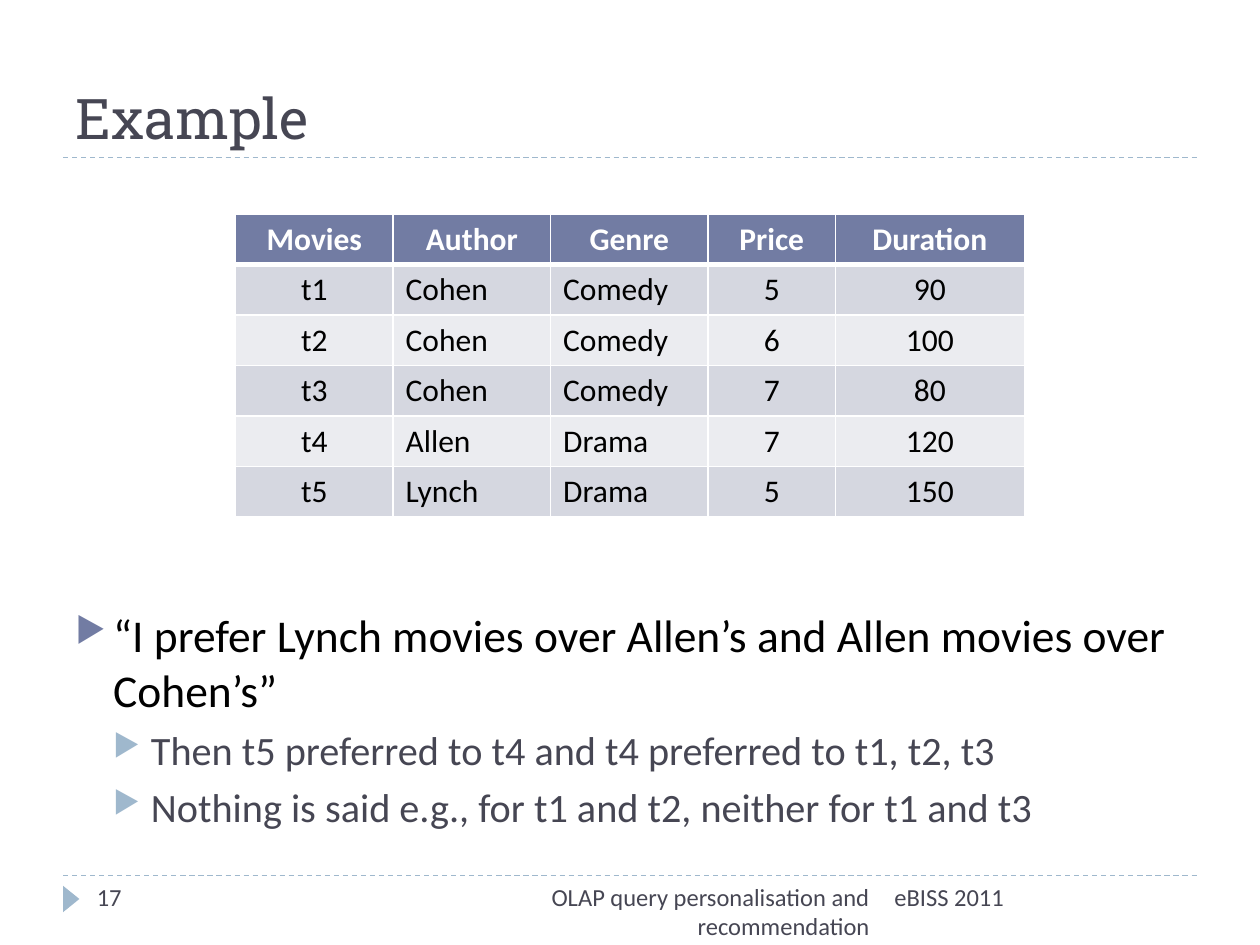
from lxml import etree
from pptx import Presentation
from pptx.dml.color import RGBColor
from pptx.enum import dml, shapes, text
from pptx.oxml import parse_xml
from pptx.oxml.ns import nsdecls, qn
from pptx.util import Inches, Pt

INK = RGBColor(0x46, 0x46, 0x53)
BLACK = RGBColor(0, 0, 0)
WHITE = RGBColor(0xFF, 0xFF, 0xFF)
INDIGO = RGBColor(0x72, 0x7C, 0xA3)
SKY = RGBColor(0x9F, 0xB8, 0xCD)
BANDS = [RGBColor(0xEB, 0xEC, 0xF0), RGBColor(0xD5, 0xD7, 0xE0)]
LEFT, CENTER, RIGHT = text.PP_ALIGN.LEFT, text.PP_ALIGN.CENTER, text.PP_ALIGN.RIGHT


def write(p, words, size, color, align=LEFT, **formats):
    p.alignment = align
    r = p.add_run()
    r.text = words
    r.font.color.rgb = color
    for name, value in {"name": "Calibri", "size": Pt(size), **formats}.items():
        setattr(r.font, name, value)


def add_text(s, left, top, width, height):
    box = s.shapes.add_textbox(Inches(left), Inches(top), Inches(width), Inches(height))
    box.text_frame.word_wrap = True
    return box.text_frame


prs = Presentation()
prs.slide_width, prs.slide_height = Inches(10), Inches(7.5)
s = prs.slides.add_slide(prs.slide_layouts[5])

# Dashed rules under the title and above the footer
for y in (6.95, 1.25):
    rule = s.shapes.add_connector(shapes.MSO_CONNECTOR.STRAIGHT,
                                  Inches(0.5), Inches(y), Inches(9.5), Inches(y))
    rule.line.color.rgb = SKY
    rule.line.width = Pt(0.75)
    rule.line.dash_style = dml.MSO_LINE.DASH
    etree.SubElement(rule._element.spPr, qn("a:effectLst"))

# Page number marker
marker = s.shapes.add_shape(shapes.MSO_SHAPE.ISOSCELES_TRIANGLE,
                            Inches(0.46), Inches(7.07), Inches(0.21), Inches(0.13))
marker.rotation = 90
marker.shadow.inherit = False
marker.fill.solid()
marker.fill.fore_color.rgb = SKY
marker.line.fill.background()

# Title
title = s.shapes.title
for name, value in dict(left=0.5, top=0.17, width=9, height=1.08).items():
    setattr(title, name, Inches(value))
tf = title.text_frame
tf.vertical_anchor = text.MSO_ANCHOR.BOTTOM
tf.auto_size = text.MSO_AUTO_SIZE.NONE
write(tf.paragraphs[0], "Example", 32, INK, name="Roboto Slab")

# Bulleted statement: level, text size, text colour, bullet colour, space before, words
bullets = [
    (0, 26, BLACK, INDIGO, 6,
     "“I prefer Lynch movies over Allen’s and Allen movies over Cohen’s”"),
    (1, 23, INK, SKY, 5, "Then t5 preferred to t4 and t4 preferred to t1, t2, t3"),
    (1, 23, INK, SKY, 5, "Nothing is said e.g., for t1 and t2, neither for t1 and t3"),
]
tf = add_text(s, 0.5, 4.77, 9, 1.96)
for i, (level, size, color, bullet_color, before, words) in enumerate(bullets):
    p = tf.add_paragraph() if i else tf.paragraphs[0]
    write(p, words, size, color)
    p.level = level
    p.space_before = Pt(before)
    pPr = p._p.get_or_add_pPr()
    pPr.set("marL", str(Inches(0.3 * (level + 1))))
    pPr.set("indent", str(Inches(-0.3)))
    for xml in (f'<a:buClr {nsdecls("a")}><a:srgbClr val="{bullet_color}"/></a:buClr>',
                f'<a:buSzPct {nsdecls("a")} val="76000"/>',
                f'<a:buChar {nsdecls("a")} char="▶"/>'):
        pPr.append(parse_xml(xml))

# Movie table
rows = [
    ("Movies", "Author", "Genre", "Price", "Duration"),
    ("t1", "Cohen", "Comedy", "5", "90"),
    ("t2", "Cohen", "Comedy", "6", "100"),
    ("t3", "Cohen", "Comedy", "7", "80"),
    ("t4", "Allen", "Drama", "7", "120"),
    ("t5", "Lynch", "Drama", "5", "150"),
]
widths = [1.25, 1.25, 1.25, 1.01, 1.5]
table = s.shapes.add_table(len(rows), len(widths), Inches(1.87), Inches(1.7),
                           Inches(sum(widths)), Inches(2.4)).table
table.horz_banding = False
for column, width in zip(table.columns, widths):
    column.width = Inches(width)
for i, row in enumerate(rows):
    header = i == 0
    for j, words in enumerate(row):
        cell = table.cell(i, j)
        tcPr = cell._tc.get_or_add_tcPr()
        for side in "LRTB":
            thick = (header and side == "B") or (i == 1 and side == "T")
            tcPr.append(parse_xml(
                f'<a:ln{side} {nsdecls("a")} w="{Pt(3 if thick else 1)}"><a:solidFill>'
                f'<a:srgbClr val="{WHITE}"/></a:solidFill></a:ln{side}>'))
        cell.fill.solid()
        cell.fill.fore_color.rgb = INDIGO if header else BANDS[i % 2]
        align = LEFT if not header and j in (1, 2) else CENTER
        write(cell.text_frame.paragraphs[0], words, 18,
              WHITE if header else BLACK, align, bold=header)

# Footer
for left, width, align, words in (
        (3.17, 3.83, RIGHT, "OLAP query personalisation and recommendation"),
        (7, 2.5, LEFT, "eBISS 2011"),
        (0.67, 2.17, LEFT, "17")):
    tf = add_text(s, left, 6.95, width, 0.4)
    write(tf.paragraphs[0], words, 14, INK, align)

prs.save("out.pptx")
